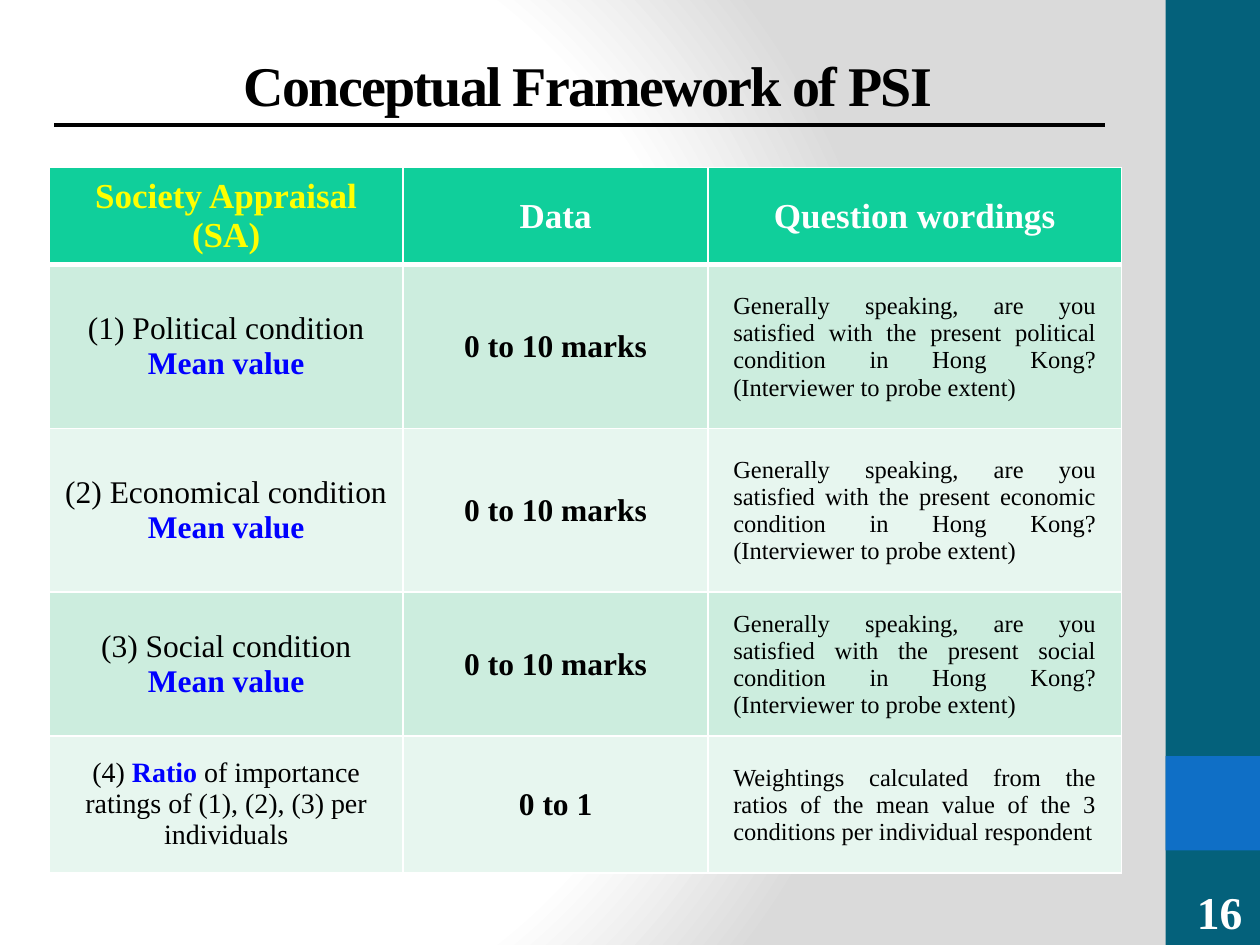
from lxml import etree
from pptx import Presentation
from pptx.dml.color import RGBColor
from pptx.enum.shapes import MSO_CONNECTOR, MSO_SHAPE
from pptx.enum.text import MSO_ANCHOR, MSO_AUTO_SIZE, PP_ALIGN
from pptx.oxml import parse_xml
from pptx.oxml.ns import nsdecls, qn
from pptx.util import Inches, Pt

CENTER, JUSTIFY = PP_ALIGN.CENTER, PP_ALIGN.JUSTIFY
TOP, MIDDLE, BOTTOM = MSO_ANCHOR.TOP, MSO_ANCHOR.MIDDLE, MSO_ANCHOR.BOTTOM
NO_AUTOFIT = MSO_AUTO_SIZE.NONE
RECTANGLE, STRAIGHT = MSO_SHAPE.RECTANGLE, MSO_CONNECTOR.STRAIGHT
GRID_COLUMNS, GRID_ROWS = 40, 30
TITLE_ONLY = 5

COLORS = {
    "white": "FFFFFF", "gray": "DADADA", "black": "000000",
    "teal": "04617B", "blue": "0F6FC6", "highlight": "0000FF",
    "header": "10CF9B", "yellow": "FFFF00",
    "dark_band": "CCEDDE", "light_band": "E7F6EF",
}
WIDE_INSETS = (0.1, 0.05, 0.1, 0.05)
TIGHT_INSETS = (0.01, 0.01, 0.01, 0)
WORDING_INSETS = (0.01, 0.01, 0.2, 0)


class SlideBuilder:
    font = "Times New Roman"

    def __init__(self, presentation):
        self.slide = presentation.slides.add_slide(presentation.slide_layouts[TITLE_ONLY])
        self.column = presentation.slide_width / GRID_COLUMNS
        self.row = presentation.slide_height / GRID_ROWS

    def box(self, left, top, width, height):
        return (round(left * self.column), round(top * self.row),
                round(width * self.column), round(height * self.row))

    def color(self, name):
        return RGBColor.from_string(COLORS[name])

    def background(self, stops):
        stop_list = "".join(
            f'<a:gs pos="{share * 1000}"><a:srgbClr val="{COLORS[name]}"/></a:gs>'
            for share, name in stops)
        self.slide.element.cSld.insert(0, parse_xml(
            f'<p:bg {nsdecls("p", "a")}><p:bgPr><a:gradFill rotWithShape="1">'
            f'<a:gsLst>{stop_list}</a:gsLst><a:path path="circle">'
            '<a:fillToRect l="20000" t="50000" r="100000" b="50000"/></a:path>'
            '</a:gradFill><a:effectLst/></p:bgPr></p:bg>'))

    def format_run(self, run, size, color, bold):
        run.font.name = self.font
        run.font.size = Pt(size)
        run.font.bold = bold
        run.font.color.rgb = self.color(color)

    def rectangle(self, box, color):
        shape = self.slide.shapes.add_shape(RECTANGLE, *self.box(*box))
        shape.shadow.inherit = False
        shape.fill.solid()
        shape.fill.fore_color.rgb = self.color(color)
        shape.line.fill.background()

    def rule(self, left, right, top, width):
        x, y, length, _ = self.box(left, top, right - left, 0)
        connector = self.slide.shapes.add_connector(STRAIGHT, x, y, x + length, y)
        connector.line.width = Pt(width)
        connector.line.color.rgb = self.color("black")
        etree.SubElement(connector.element.spPr, qn("a:effectLst"))

    def single_line(self, shape, text, size, color, anchor):
        frame = shape.text_frame
        frame.text = text
        frame.word_wrap = True
        frame.auto_size = NO_AUTOFIT
        frame.vertical_anchor = anchor
        frame.paragraphs[0].alignment = CENTER
        run = frame.paragraphs[0].runs[0]
        self.format_run(run, size, color, True)
        return run

    def title(self, box, text):
        shape = self.slide.shapes.title
        shape.left, shape.top, shape.width, shape.height = self.box(*box)
        run = self.single_line(shape, text, 32, "black", TOP)
        shape.text_frame.margin_top = Inches(0.1)
        run.font._element.set("spc", "-100")

    def page_number(self, box, text):
        shape = self.slide.shapes.add_textbox(*self.box(*box))
        self.single_line(shape, text, 26, "white", BOTTOM)

    def table(self, left, top, widths, heights):
        frame = self.slide.shapes.add_table(
            len(heights), len(widths), *self.box(left, top, sum(widths), sum(heights)))
        table = frame.table
        for column, width in zip(table.columns, widths):
            column.width = round(width * self.column)
        for row, height in zip(table.rows, heights):
            row.height = round(height * self.row)
        return table

    def borders(self, cell, bottom_width):
        properties = cell._tc.get_or_add_tcPr()
        widths = {"lnL": 1, "lnR": 1, "lnT": 1, "lnB": bottom_width}
        for index, (side, width) in enumerate(widths.items()):
            properties.insert(index, parse_xml(
                f'<a:{side} {nsdecls("a")} w="{Pt(width)}"><a:solidFill>'
                f'<a:srgbClr val="{COLORS["white"]}"/></a:solidFill></a:{side}>'))

    def cell(self, cell, text, fill, size, color="black", bold=False, insets=TIGHT_INSETS,
             alignment=CENTER, indent=0, highlight=None, bottom_width=1):
        cell.fill.solid()
        cell.fill.fore_color.rgb = self.color(fill)
        self.borders(cell, bottom_width)
        cell.vertical_anchor = MIDDLE
        (cell.margin_left, cell.margin_top,
         cell.margin_right, cell.margin_bottom) = map(Inches, insets)
        paragraph = cell.text_frame.paragraphs[0]
        paragraph.text = text.replace("|", "\v" if "\v" not in text else "")
        if highlight:
            before, _, after = text.partition(highlight)
            paragraph.text = before
            paragraph.add_run().text = highlight
            if after:
                paragraph.add_run().text = after
        paragraph.alignment = alignment
        if indent:
            paragraph._p.get_or_add_pPr().set("marL", str(Inches(indent)))
        for run in paragraph.runs:
            marked = run.text == highlight
            self.format_run(run, size, "highlight" if marked else color, bold or marked)


def main():
    presentation = Presentation()
    presentation.slide_width, presentation.slide_height = Inches(10), Inches(7.5)
    builder = SlideBuilder(presentation)

    builder.background([(0, "white"), (75, "white"), (100, "gray")])
    builder.rectangle((37, 0, 3, 30), "teal")
    builder.rectangle((37, 24, 3, 3), "blue")
    builder.page_number((37.44, 27.88, 2.56, 2.12), "16")
    builder.rule(1.72, 35.08, 3.96, 2.25)
    builder.title((2, 1.2, 33.32, 2.24), "Conceptual Framework of PSI")

    table = builder.table(1.56, 5.32, (11.24, 9.68, 13.12), (3.08, 5.2, 5.2, 4.56, 4.36))
    headers = [("Society Appraisal (SA)", "yellow", WIDE_INSETS),
               ("Data", "white", TIGHT_INSETS),
               ("Question wordings", "white", TIGHT_INSETS)]
    for index, (text, color, insets) in enumerate(headers):
        builder.cell(table.cell(0, index), text, "header", 20, color, True, insets,
                     bottom_width=3)

    conditions = [("Political", "political"), ("Economical", "economic"), ("Social", "social")]
    appraisals = [
        (f"({number}) {name} condition\vMean value", "Mean value", 18, "0 to 10 marks",
         f"Generally speaking, are you satisfied with the present {topic} condition "
         "in Hong Kong? (Interviewer to probe extent)")
        for number, (name, topic) in enumerate(conditions, 1)]
    appraisals.append(
        ("(4) Ratio of importance ratings of (1), (2), (3) per individuals", "Ratio", 16,
         "0 to 1", "Weightings calculated from the ratios of the mean value of the 3 "
         "conditions per individual respondent"))
    for index, (name, highlight, size, data, wording) in enumerate(appraisals, 1):
        band = "dark_band" if index % 2 else "light_band"
        builder.cell(table.cell(index, 0), name, band, size, insets=WIDE_INSETS,
                     highlight=highlight)
        builder.cell(table.cell(index, 1), data, band, 18, bold=True)
        builder.cell(table.cell(index, 2), wording, band, 14, insets=WORDING_INSETS,
                     alignment=JUSTIFY, indent=0.19)

    presentation.save("out.pptx")


if __name__ == "__main__":
    main()
